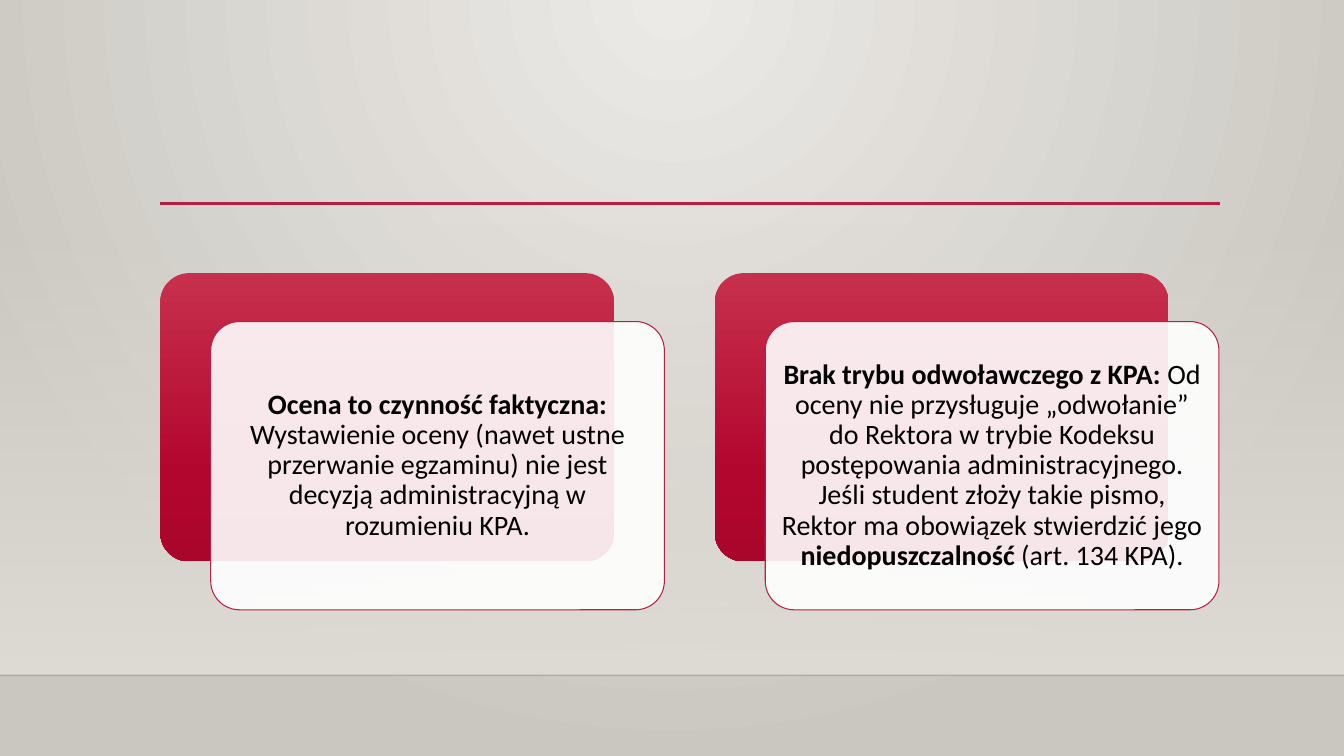
import pptx
import pptx.dml.color
import pptx.enum.shapes
import pptx.enum.text
import pptx.oxml
import pptx.oxml.ns
import pptx.util
from pptx.util import Inches

RGBColor = pptx.dml.color.RGBColor
Shape = pptx.enum.shapes.MSO_SHAPE

CRIMSON = RGBColor(0xB7, 0x1E, 0x42)
CRIMSON_LIGHT = RGBColor(0xC7, 0x30, 0x4C)
CRIMSON_MID = RGBColor(0xB3, 0x06, 0x2F)
CRIMSON_DARK = RGBColor(0xAA, 0x06, 0x2C)
WALL_LIGHT = RGBColor(0xEC, 0xEA, 0xE7)
WALL_DARK = RGBColor(0xCA, 0xC7, 0xC1)
FLOOR = RGBColor(0xDF, 0xDB, 0xD5)
NEAR_BLACK = RGBColor(0x00, 0x00, 0x01)
BLACK = RGBColor(0x00, 0x00, 0x00)
WHITE = RGBColor(0xFF, 0xFF, 0xFF)

DOWNWARD = '<a:lin {ns} ang="5400000" scaled="0"/>'
FROM_TOP = ('<a:path {ns} path="circle">'
            '<a:fillToRect l="43000" t="0" r="43000" b="100000"/></a:path>')


def element_from(markup):
    return pptx.oxml.parse_xml(markup.format(ns=pptx.oxml.ns.nsdecls("a")))


class SlideBuilder:
    font_name = "Calibri"
    font_size = pptx.util.Pt(20)
    card_width, card_height = 4.5, 2.86
    card_shift = (0.5, 0.48)

    def __init__(self, slide):
        self.slide = slide

    def set_alpha(self, owner, percent):
        color = owner.find(".//" + pptx.oxml.ns.qn("a:srgbClr"))
        color.append(element_from(f'<a:alpha {{ns}} val="{percent * 1000}"/>'))

    def gradient(self, fill, owner, stops, direction):
        """Stops are (position %, colour, opacity %)."""
        fill.gradient()
        gradient = owner.find(".//" + pptx.oxml.ns.qn("a:gradFill"))
        for child in list(gradient):
            gradient.remove(child)
        marks = "".join(
            f'<a:gs pos="{position * 1000}"><a:srgbClr val="{color}">'
            f'<a:alpha val="{opacity * 1000}"/></a:srgbClr></a:gs>'
            for position, color, opacity in stops)
        gradient.append(element_from("<a:gsLst {ns}>" + marks + "</a:gsLst>"))
        gradient.append(element_from(direction))

    def background(self, stops):
        self.gradient(self.slide.background.fill, self.slide.element, stops, FROM_TOP)

    def shape(self, kind, left, top, width, height):
        shape = self.slide.shapes.add_shape(
            kind, Inches(left), Inches(top), Inches(width), Inches(height))
        shape.shadow.inherit = False
        shape.line.fill.background()
        return shape

    def gradient_box(self, kind, left, top, width, height, stops):
        shape = self.shape(kind, left, top, width, height)
        self.gradient(shape.fill, shape.element.spPr, stops, DOWNWARD)
        return shape

    def rule(self, left, right, y, color, points, opacity=100):
        line = self.slide.shapes.add_connector(
            pptx.enum.shapes.MSO_CONNECTOR.STRAIGHT,
            Inches(left), Inches(y), Inches(right), Inches(y))
        line.line.color.rgb = color
        line.line.width = pptx.util.Pt(points)
        if opacity < 100:
            self.set_alpha(line.element.spPr, opacity)
        line.element.spPr.append(element_from("<a:effectLst {ns}/>"))

    def card(self, left, top, runs):
        size = (self.card_width, self.card_height)
        back = self.gradient_box(
            Shape.ROUNDED_RECTANGLE, left, top, *size,
            [(0, CRIMSON_LIGHT, 100), (69, CRIMSON_MID, 100), (100, CRIMSON_DARK, 100)])
        front = self.shape(Shape.ROUNDED_RECTANGLE, left + self.card_shift[0],
                           top + self.card_shift[1], *size)
        for shape in (back, front):
            shape.adjustments[0] = 0.1
        front.fill.solid()
        front.fill.fore_color.rgb = WHITE
        self.set_alpha(front.element.spPr, 90)
        front.line.color.rgb = CRIMSON
        front.line.width = pptx.util.Pt(0.75)
        self.card_text(front.text_frame, runs)

    def card_text(self, frame, runs):
        frame.word_wrap = True
        frame.vertical_anchor = pptx.enum.text.MSO_ANCHOR.MIDDLE
        frame.margin_left = frame.margin_right = Inches(0.08)
        frame.margin_top = frame.margin_bottom = Inches(0.08)
        paragraph = frame.paragraphs[0]
        paragraph.alignment = pptx.enum.text.PP_ALIGN.CENTER
        paragraph.line_spacing = 0.9
        paragraph.font.name = self.font_name
        paragraph.font.size = self.font_size
        paragraph.font.color.rgb = BLACK
        for text, bold in runs:
            run = paragraph.add_run()
            run.text = text
            run.font.bold = bold


CARDS = [
    [("Ocena to czynność faktyczna:", True),
     (" Wystawienie oceny (nawet ustne przerwanie egzaminu) nie jest decyzją "
      "administracyjną w rozumieniu KPA.", False)],
    [("Brak trybu odwoławczego z KPA:", True),
     (" Od oceny nie przysługuje „odwołanie” do Rektora w trybie Kodeksu "
      "postępowania administracyjnego. Jeśli student złoży takie pismo, Rektor ma "
      "obowiązek stwierdzić jego ", False),
     ("niedopuszczalność", True),
     (" (art. 134 KPA).", False)],
]


def main():
    presentation = pptx.Presentation()
    presentation.slide_width = Inches(13.33)
    presentation.slide_height = Inches(7.5)
    builder = SlideBuilder(presentation.slides.add_slide(presentation.slide_layouts[6]))

    # Backdrop: wall, fading floor and its edge
    builder.background([(0, WALL_LIGHT, 100), (100, WALL_DARK, 100)])
    builder.gradient_box(Shape.RECTANGLE, 0, 2.21, 13.33, 4.49,
                         [(0, FLOOR, 0), (100, FLOOR, 100)])
    builder.rule(0, 13.33, 6.7, NEAR_BLACK, 1, opacity=20)

    # Title rule
    builder.rule(1.59, 12.1, 2.02, CRIMSON, 2.5)

    # Two cards
    for index, runs in enumerate(CARDS):
        builder.card(1.59 + index * 5.5, 2.71, runs)

    presentation.save("out.pptx")


if __name__ == "__main__":
    main()
